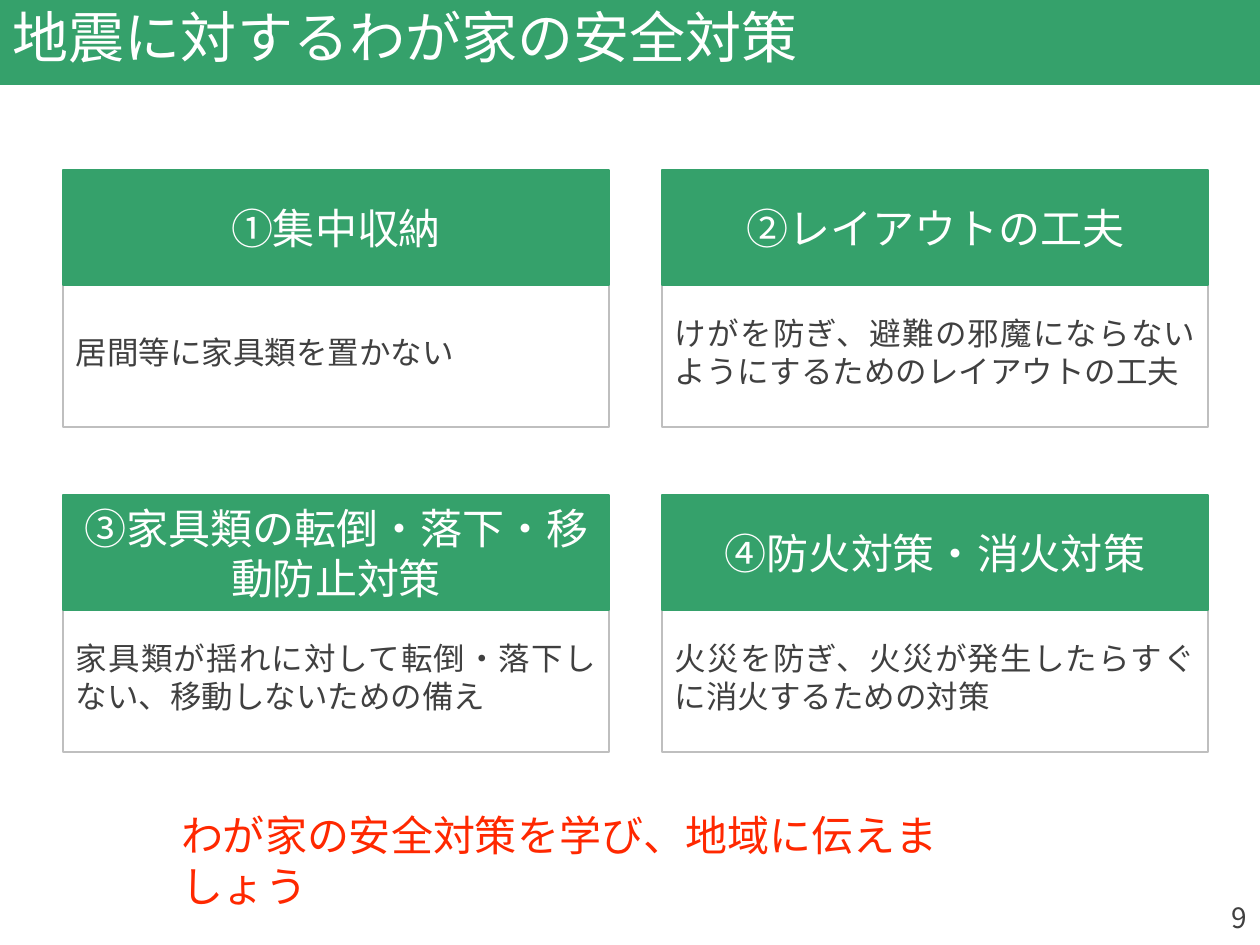
import pptx
import pptx.util
import pptx.dml.color
import pptx.enum.shapes
import pptx.enum.text
import pptx.oxml.ns
from lxml import etree

RGBColor = pptx.dml.color.RGBColor
ALIGN = pptx.enum.text.PP_ALIGN
ANCHOR = pptx.enum.text.MSO_ANCHOR

EMU_PER_PX = 914400 / 126
FONT = "Noto Sans CJK JP"
GREEN = RGBColor(0x35, 0xA1, 0x6B)
WHITE = RGBColor(0xFF, 0xFF, 0xFF)
GRAY = RGBColor(0xBF, 0xBF, 0xBF)
DARK = RGBColor(0x40, 0x40, 0x40)
RED = RGBColor(0xFF, 0x28, 0x00)

CARD_LEFT, CARD_TOP = 63, 170
COLUMN_STEP, ROW_STEP = 599, 325
CARD_WIDTH, HEADING_HEIGHT, BODY_HEIGHT = 546, 115, 150
BODY_OFFSET = 107
CARDS = [
    ("①集中収納", "居間等に家具類を置かない"),
    ("②レイアウトの工夫", "けがを防ぎ、避難の邪魔にならないようにするためのレイアウトの工夫"),
    ("③家具類の転倒・落下・移動防止対策", "家具類が揺れに対して転倒・落下しない、移動しないための備え"),
    ("④防火対策・消火対策", "火災を防ぎ、火災が発生したらすぐに消火するための対策"),
]


def px(length):
    return pptx.util.Emu(round(length * EMU_PER_PX))


def write_text(box, text, size, color, align=ALIGN.LEFT, anchor=ANCHOR.TOP,
               margin_y=6, line_spacing=None):
    frame_format = {
        "word_wrap": True, "vertical_anchor": anchor,
        "margin_left": px(13), "margin_right": px(13),
        "margin_top": px(margin_y), "margin_bottom": px(margin_y),
    }
    for name, value in frame_format.items():
        setattr(box.text_frame, name, value)
    para = box.text_frame.paragraphs[0]
    para.alignment = align
    para.line_spacing = line_spacing
    span = para.add_run()
    span.text = text
    for name, value in {"name": FONT, "size": pptx.util.Pt(size)}.items():
        setattr(span.font, name, value)
    span.font.color.rgb = color
    # Japanese glyphs take the East Asian typeface, which font.name leaves unset
    east_asian = etree.SubElement(span.font._element, pptx.oxml.ns.qn("a:ea"))
    east_asian.set("typeface", FONT)


def add_panel(page, left, top, width, height, fill=None, line=None):
    panel = page.shapes.add_shape(pptx.enum.shapes.MSO_SHAPE.RECTANGLE,
                                  px(left), px(top), px(width), px(height))
    panel.shadow.inherit = False
    for part, color in ((panel.fill, fill), (panel.line.fill, line)):
        if color is None:
            part.background()
        else:
            part.solid()
            part.fore_color.rgb = color
    if line is not None:
        panel.line.width = pptx.util.Pt(1)
    return panel


def add_label(page, left, top, width, height, text, size, color, align=ALIGN.LEFT):
    label = page.shapes.add_textbox(px(left), px(top), px(width), px(height))
    write_text(label, text, size, color, align)
    return label


def add_card(page, left, top, heading, body):
    """Add a bordered body with a green heading overlapping its top edge."""
    body_box = add_panel(page, left, top + BODY_OFFSET, CARD_WIDTH, BODY_HEIGHT,
                         line=GRAY)
    write_text(body_box, body, 18, DARK, ALIGN.JUSTIFY, ANCHOR.MIDDLE, margin_y=20)
    heading_box = add_panel(page, left, top, CARD_WIDTH, HEADING_HEIGHT, GREEN, GREEN)
    write_text(heading_box, heading, 24, WHITE, ALIGN.CENTER, ANCHOR.MIDDLE)


def main():
    deck = pptx.Presentation()
    deck.slide_width, deck.slide_height = px(1260), px(945)
    page = deck.slides.add_slide(deck.slide_layouts[6])

    title = add_panel(page, 0, -4, 1260, 89, fill=GREEN)
    write_text(title, "地震に対するわが家の安全対策", 32, WHITE,
               anchor=ANCHOR.MIDDLE, line_spacing=0.9)
    add_label(page, 977, 895, 283, 50, "9", 16, DARK, ALIGN.RIGHT)

    for index, (heading, body) in enumerate(CARDS):
        row, column = divmod(index, 2)
        add_card(page, CARD_LEFT + column * COLUMN_STEP, CARD_TOP + row * ROW_STEP,
                 heading, body)

    message = add_label(page, 168, 804, 853, 63,
                        "わが家の安全対策を学び、地域に伝えましょう", 24, RED)
    message.text_frame.auto_size = pptx.enum.text.MSO_AUTO_SIZE.SHAPE_TO_FIT_TEXT

    deck.save("out.pptx")


if __name__ == "__main__":
    main()
